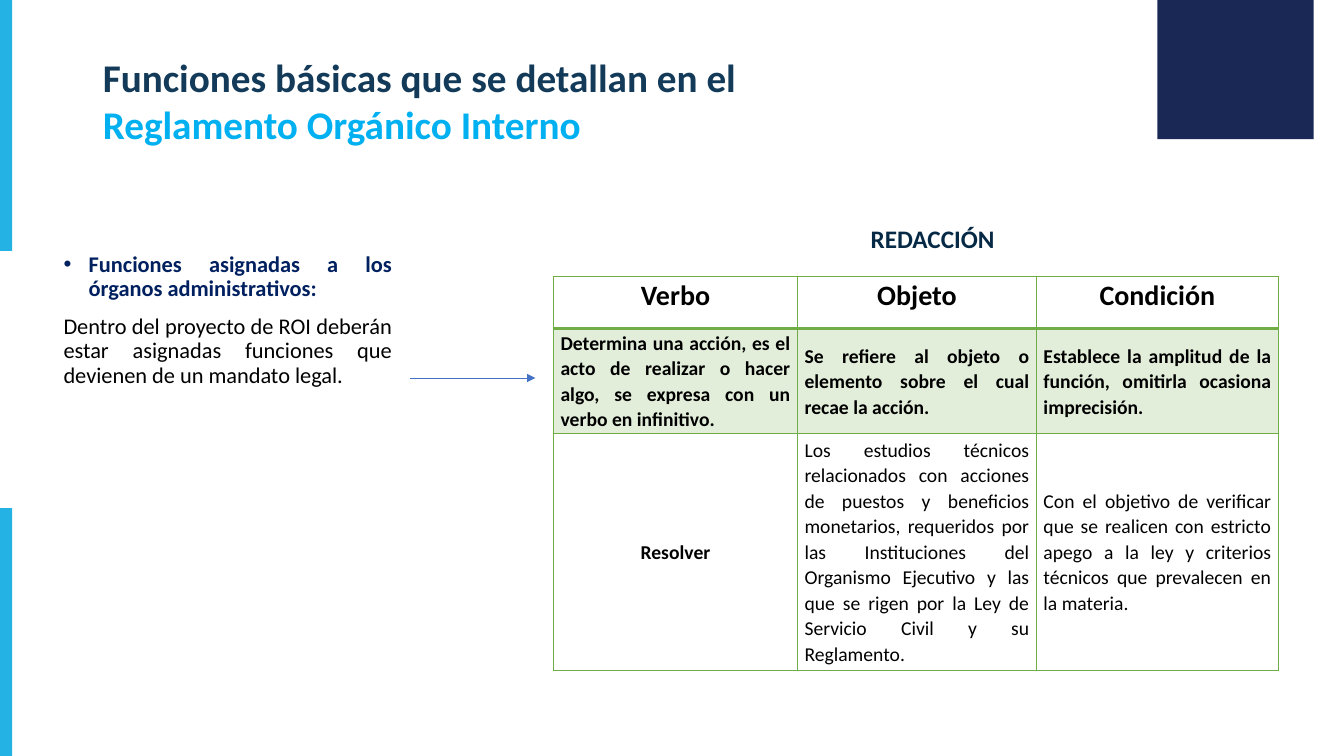
"""Build the slide on the basic functions of the internal rules."""
from dataclasses import dataclass
from lxml import etree
from pptx import Presentation
from pptx.dml.color import RGBColor
from pptx.enum.shapes import MSO_CONNECTOR, MSO_SHAPE
from pptx.enum.text import MSO_ANCHOR, MSO_AUTO_SIZE, PP_ALIGN
from pptx.oxml.ns import qn
from pptx.util import Pt

PX = 9144
RECT, LINE = MSO_SHAPE.RECTANGLE, MSO_CONNECTOR.STRAIGHT
TOP, MIDDLE = MSO_ANCHOR.TOP, MSO_ANCHOR.MIDDLE
MID, FULL = PP_ALIGN.CENTER, PP_ALIGN.JUSTIFY
FIXED = MSO_AUTO_SIZE.NONE


@dataclass(frozen=True)
class Theme:
    """Hold the colours, font and type sizes."""
    font: str = "Calibri"
    ink: str = "000000"
    title: str = "133B59"
    accent: str = "00B0F0"
    lead: str = "002060"
    head: str = "062A46"
    bar: str = "23B2E3"
    block: str = "192854"
    arrow: str = "4472C4"
    grid: str = "70AD47"
    big: int = 28
    label: int = 18
    body: int = 16
    column: int = 20
    cell: int = 14


THEME = Theme()
TITLE = [("Funciones básicas que se detallan en el", THEME.title),
         ("Reglamento Orgánico Interno", THEME.accent)]
LEAD = "Funciones asignadas a los órganos administrativos:"
BODY = ("Dentro del proyecto de ROI deberán estar asignadas funciones "
        "que devienen de un mandato legal.")
LABEL = "REDACCIÓN"
ROWS = [
    ["Verbo", "Objeto", "Condición"],
    ["Determina una acción, es el acto de realizar o hacer algo, "
     "se expresa con un verbo en infinitivo.",
     "Se refiere al objeto o elemento sobre el cual recae la acción.",
     "Establece la amplitud de la función, omitirla ocasiona imprecisión."],
    ["Resolver",
     "Los estudios técnicos relacionados con acciones de puestos y "
     "beneficios monetarios, requeridos por las Instituciones del Organismo "
     "Ejecutivo y las que se rigen por la Ley de Servicio Civil y su "
     "Reglamento.",
     "Con el objetivo de verificar que se realicen con estricto apego a la "
     "ley y criterios técnicos que prevalecen en la materia."],
]
WIDTHS = [242, 237, 240]
HEIGHTS = [52, 104, 235]
BLOCKS = [((0, 0, 12, 249), THEME.bar), ((0, 504, 12, 246), THEME.bar),
          ((1148, 0, 155, 138), THEME.block)]


def emu(*px):
    """Turn px into EMU."""
    return [n * PX for n in px]


def place(shape, *box):
    """Move and size a shape."""
    shape.left, shape.top, shape.width, shape.height = emu(*box)


def write(frame, text, first=False, size=THEME.body, color=THEME.ink,
          bold=True, align=FULL, line=1.0, before=0, after=0, bullet=None):
    """Add one paragraph with its format."""
    par = frame.paragraphs[0] if first else frame.add_paragraph()
    par.alignment, par.line_spacing = align, line
    par.space_before, par.space_after = Pt(before), Pt(after)
    run = par.add_run()
    run.text = text
    font = run.font
    font.name, font.size, font.bold = THEME.font, Pt(size), bold
    font.color.rgb = RGBColor.from_string(color)
    props = par._p.get_or_add_pPr()
    indent = 25 * PX if bullet else 0
    props.set("marL", str(indent))
    props.set("indent", str(-indent))
    if bullet:
        etree.SubElement(props, qn("a:buFont"), typeface="Arial")
        etree.SubElement(props, qn("a:buChar"), char=bullet)
    else:
        etree.SubElement(props, qn("a:buNone"))


def border(cell, low):
    """Draw the four sides of a cell, the lower one with its own width."""
    props = cell._tc.get_or_add_tcPr()
    for i, side in enumerate("LRTB"):
        width = low if side == "B" else 1
        edge = etree.Element(qn("a:ln" + side), w=str(Pt(width)))
        fill = etree.SubElement(edge, qn("a:solidFill"))
        etree.SubElement(fill, qn("a:srgbClr"), val=THEME.grid)
        props.insert(i, edge)


def tint(cell):
    """Fill a cell with the grid colour at a fifth of its strength."""
    cell.fill.solid()
    cell.fill.fore_color.rgb = RGBColor.from_string(THEME.grid)
    for color in cell._tc.tcPr.iter(qn("a:srgbClr")):
        etree.SubElement(color, qn("a:alpha"), val="20000")


def add_grid(shapes):
    """Add the table of verb, object and condition."""
    box = emu(549, 274, sum(WIDTHS), sum(HEIGHTS))
    table = shapes.add_table(len(ROWS), len(WIDTHS), *box).table
    table.first_row = table.horz_banding = False
    for col, width in zip(table.columns, WIDTHS):
        col.width = width * PX
    for r, texts in enumerate(ROWS):
        table.rows[r].height = HEIGHTS[r] * PX
        head = r == 0
        for c, text in enumerate(texts):
            cell = table.cell(r, c)
            cell.margin_left = cell.margin_right = 7 * PX
            cell.margin_top = cell.margin_bottom = 0
            cell.vertical_anchor = TOP if head else MIDDLE
            if r == 1:
                tint(cell)
            else:
                cell.fill.background()
            border(cell, 2 if head else 1)
            write(cell.text_frame, text, first=True, line=1.07,
                  size=THEME.column if head else THEME.cell,
                  bold=r < 2 or c == 0, after=0 if head else 8,
                  align=MID if head or (r == 2 and c == 0) else FULL)


def add_arrow(shapes):
    """Add the arrow from the body text to the table."""
    arrow = shapes.add_connector(LINE, *emu(407, 375, 531, 375))
    arrow.line.width = Pt(0.5)
    arrow.line.color.rgb = RGBColor.from_string(THEME.arrow)
    etree.SubElement(arrow.line._get_or_add_ln(), qn("a:tailEnd"),
                     type="triangle")
    etree.SubElement(arrow._element.spPr, qn("a:effectLst"))


def main():
    """Build and save the slide."""
    deck = Presentation()
    deck.slide_width, deck.slide_height = emu(1333, 750)
    slide = deck.slides.add_slide(deck.slide_layouts[1])
    shapes = slide.shapes

    title, body = shapes.title, slide.placeholders[1]
    place(title, 92, 48, 863, 104)
    place(body, 53, 246, 346, 167)
    for holder in (title, body):
        frame = holder.text_frame
        frame.word_wrap, frame.auto_size = True, FIXED
        frame.vertical_anchor = TOP
    for i, (text, color) in enumerate(TITLE):
        write(title.text_frame, text, first=i == 0, size=THEME.big,
              color=color)
    write(body.text_frame, LEAD, first=True, color=THEME.lead, line=0.9,
          before=38, bullet="•")
    write(body.text_frame, BODY, bold=False, line=0.9, before=10)

    for box, color in BLOCKS:
        block = shapes.add_shape(RECT, *emu(*box))
        block.shadow.inherit = False
        block.fill.solid()
        block.fill.fore_color.rgb = RGBColor.from_string(color)
        block.line.fill.background()

    add_grid(shapes)
    add_arrow(shapes)
    label = shapes.add_textbox(*emu(801, 217, 248, 40)).text_frame
    label.word_wrap = True
    write(label, LABEL, first=True, size=THEME.label, color=THEME.head,
          align=MID)
    deck.save("out.pptx")


if __name__ == "__main__":
    main()
